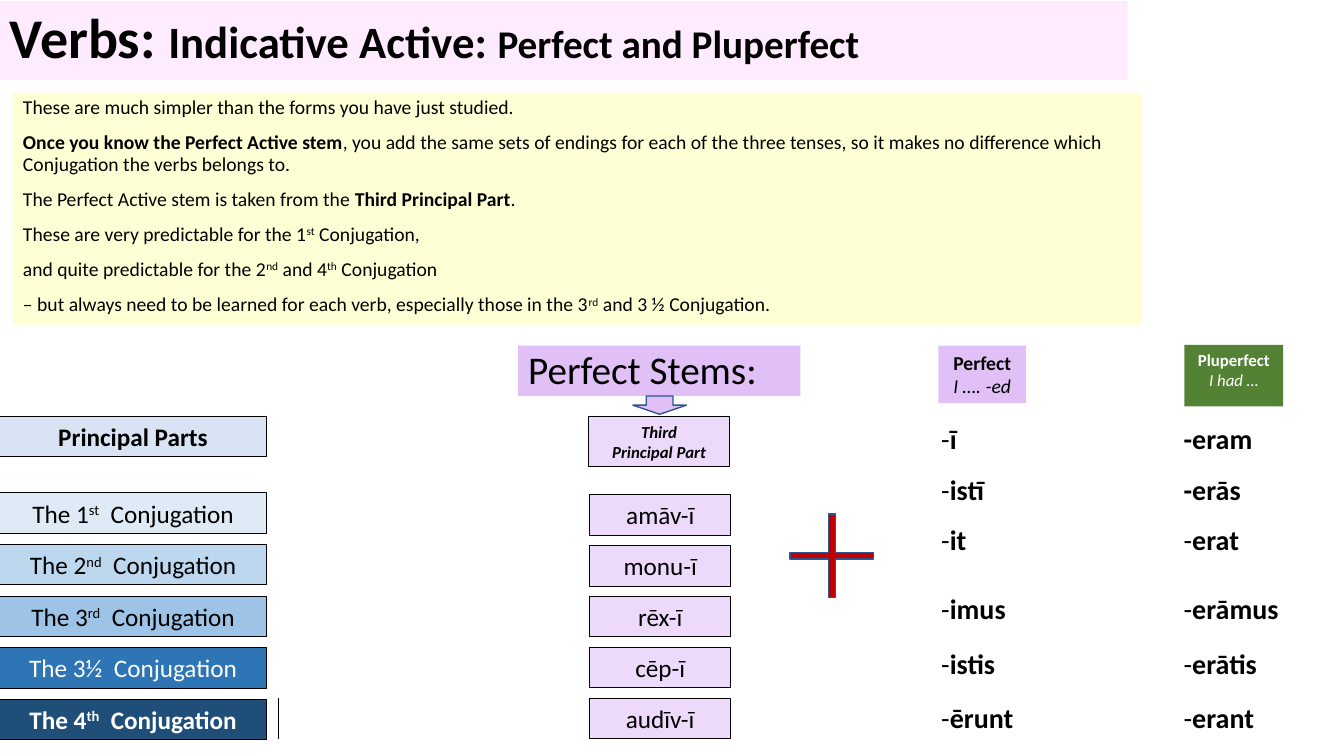
import pptx
import pptx.dml.color
import pptx.enum.shapes
import pptx.enum.text
import pptx.oxml.ns
import pptx.util
import lxml.etree
from dataclasses import dataclass

Cm = pptx.util.Cm
KIND = pptx.enum.shapes.MSO_SHAPE
ALIGN = pptx.enum.text.PP_ALIGN
ANCHOR = pptx.enum.text.MSO_ANCHOR


@dataclass
class Theme:
    font: str = "Calibri"
    # Colours
    black: str = "000000"
    white: str = "FFFFFF"
    blush: str = "FFEBFF"
    cream: str = "FFFFD5"
    lilac: str = "E0C0F6"
    pale: str = "EDDAFA"
    mist: str = "DAE3F3"
    green: str = "548235"
    red: str = "C00000"
    navy: str = "325491"
    blues: tuple = ("DEEBF7", "BDD7EE", "9DC3E6", "2E75B6", "1F4E79")
    # Type sizes
    title: tuple = (40, 32, 28)
    head: int = 28
    ending: int = 20
    label: int = 18
    body: int = 14
    small: int = 12


class Page:
    """Holds the theme and the current slide."""

    def __init__(self, deck, theme):
        self.theme = theme
        self.slide = deck.slides.add_slide(deck.slide_layouts[6])

    def color(self, code):
        return pptx.dml.color.RGBColor.from_string(code)

    def shape(self, kind, place, fill, line=None, width=0.75):
        item = self.slide.shapes.add_shape(kind, *map(Cm, place))
        item.shadow.inherit = False
        item.fill.solid()
        item.fill.fore_color.rgb = self.color(fill)
        if line:
            item.line.color.rgb = self.color(line)
            item.line.width = pptx.util.Pt(width)
        else:
            item.line.fill.background()
        return item

    def words(self, frame, paras, size, color=None, align=ALIGN.LEFT, tight=False, gap=0):
        """Each paragraph is a list of (text, style, size); style letters: b, i, s(uper)."""
        frame.word_wrap = True
        frame.vertical_anchor = ANCHOR.TOP
        for n, parts in enumerate(paras):
            para = frame.add_paragraph() if n else frame.paragraphs[0]
            para.alignment = align
            if tight:
                para.line_spacing = 0.9
            if gap:
                para.space_before = pptx.util.Pt(gap)
            para.text = parts[0][0]
            for part in parts[1:]:
                para.add_run().text = part[0]
            for run, (_, style, *own) in zip(para.runs, parts):
                run.font.name = self.theme.font
                run.font.size = pptx.util.Pt(own[0] if own else size)
                run.font.color.rgb = self.color(color or self.theme.black)
                run.font.bold = "b" in style
                run.font.italic = "i" in style
                if "s" in style:
                    run._r.get_or_add_rPr().set("baseline", "30000")

    def box(self, place, fill, paras, size, line=None, **text):
        item = self.shape(KIND.RECTANGLE, place, fill, line)
        self.words(item.text_frame, paras, size, **text)
        return item

    def label(self, place, paras, size):
        item = self.slide.shapes.add_textbox(*map(Cm, place))
        self.words(item.text_frame, paras, size)

    def rule(self, start, end, width):
        kind = pptx.enum.shapes.MSO_CONNECTOR.STRAIGHT
        item = self.slide.shapes.add_connector(kind, *map(Cm, start + end))
        item.line.color.rgb = self.color(self.theme.black)
        item.line.width = pptx.util.Pt(width)
        lxml.etree.SubElement(item._element.spPr, pptx.oxml.ns.qn("a:effectLst"))


def main():
    deck = pptx.Presentation()
    deck.slide_width, deck.slide_height = Cm(33.87), Cm(19.05)
    theme = Theme()
    page = Page(deck, theme)

    # Title band
    heads = ("Verbs: ", "Indicative Active: ", "Perfect and Pluperfect")
    title = [(head, "b", size) for head, size in zip(heads, theme.title)]
    band = page.box((0, 0.03, 28.42, 1.98), theme.blush, [title], theme.head, tight=True)
    band.text_frame.vertical_anchor = ANCHOR.MIDDLE

    # Introduction
    intro = [
        [("These are much simpler than the forms you have just studied.", "")],
        [("Once you know the Perfect Active stem", "b"),
         (", you add the same sets of endings for each of the three tenses, "
          "so it makes no difference which Conjugation the verbs belongs to.", "")],
        [("The Perfect Active stem is taken from the ", ""),
         ("Third Principal Part", "b"), (".", "")],
        [("These are very predictable for the 1", ""), ("st", "s"), (" Conjugation,", "")],
        [("and quite predictable for the 2", ""), ("nd", "s"), (" and 4", ""),
         ("th", "s"), (" Conjugation", "")],
        [("– but always need to be learned for each verb, especially those in the 3", ""),
         ("rd", "s"), (" and 3 ½ Conjugation.", "")],
    ]
    page.box((0.33, 2.34, 28.42, 5.84), theme.cream, intro, theme.body, tight=True, gap=10)

    # Column heads
    page.box((13.06, 8.71, 7.11, 1.27), theme.lilac, [[("Perfect Stems:", "")]],
             theme.head, tight=True, gap=10)
    page.box((23.65, 8.71, 2.21, 1.45), theme.lilac,
             [[("Perfect", "b")], [("I …. -ed", "i")]], theme.body, align=ALIGN.CENTER)
    page.box((29.85, 8.69, 2.49, 1.55), theme.green,
             [[("Pluperfect", "b")], [("I had …", "i")]], theme.small,
             color=theme.white, align=ALIGN.CENTER)
    page.box((0, 10.49, 6.71, 1.02), theme.mist, [[("Principal Parts", "b")]],
             theme.label, line=theme.black, align=ALIGN.CENTER)
    page.box((14.83, 10.49, 3.56, 1.27), theme.pale,
             [[("Third", "bi")], [("Principal Part", "bi")]], theme.small,
             line=theme.black, align=ALIGN.CENTER)
    page.shape(KIND.DOWN_ARROW, (15.95, 9.98, 1.35, 0.46), theme.lilac, theme.navy, 1)

    # Conjugations and their stems
    rows = [("1", "st", "amāv-ī"), ("2", "nd", "monu-ī"), ("3", "rd", "rēx-ī"),
            ("3½", "", "cēp-ī"), ("4", "th", "audīv-ī")]
    for n, ((num, suffix, stem), fill) in enumerate(zip(rows, theme.blues)):
        bold = "b" if num == "4" else ""
        if suffix:
            name = [("The " + num, bold), (suffix, bold + "s"), ("  Conjugation", bold)]
        else:
            name = [(f"The {num}  Conjugation", bold)]
        page.box((0, 12.42 + 1.3 * n, 6.71, 1.02), fill, [name], theme.label,
                 line=theme.black, align=ALIGN.CENTER,
                 color=theme.white if n > 2 else theme.black)
        page.box((14.86, 12.47 + 1.28 * n, 3.56, 1.02), theme.pale, [[(stem, "")]],
                 theme.label, line=theme.black, align=ALIGN.CENTER)
    page.rule((7.02, 17.6), (7.02, 18.62), 0.5)

    # Plus sign
    plus = page.shape(KIND.CROSS, (19.91, 12.95, 2.11, 2.11), theme.red, theme.navy, 1)
    plus.adjustments[0] = 0.46

    # Endings: three singular, then three plural
    tops = [10.49 + 1.28 * n for n in range(3)] + [14.79 + 1.37 * n for n in range(3)]
    sets = [(23.47, 2.72, "ī istī it imus istis ērunt"),
            (29.58, 3.1, "eram erās erat erāmus erātis erant")]
    for left, width, ends in sets:
        for top, end in zip(tops, ends.split()):
            dash = "b" if end in ("eram", "erās") else ""
            page.label((left, top, width, 1.12), [[("-", dash), (end, "b")]], theme.ending)

    deck.save("out.pptx")


if __name__ == "__main__":
    main()
